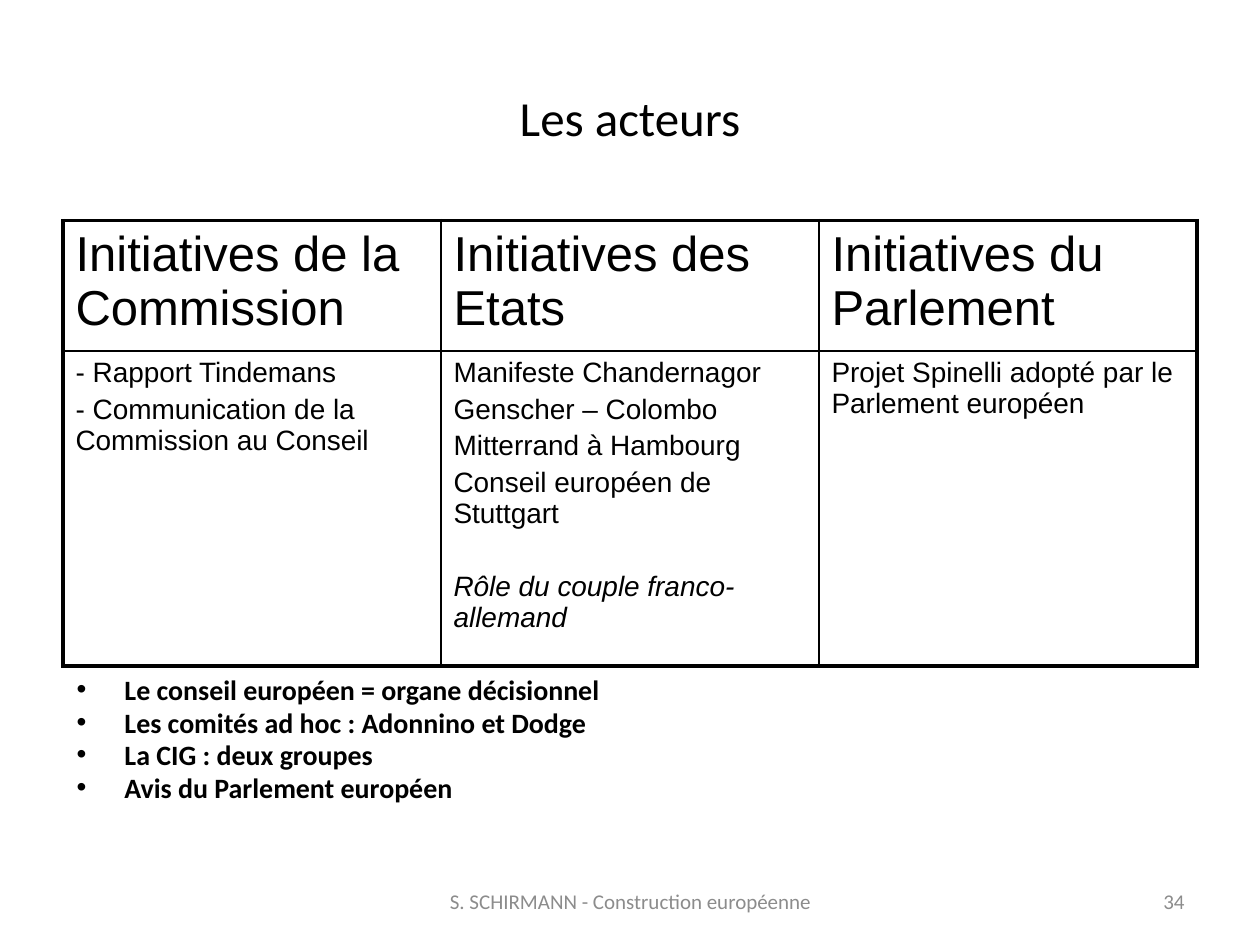
from lxml.etree import SubElement
from pptx import Presentation
from pptx.dml.color import RGBColor
from pptx.enum.text import MSO_ANCHOR as Anchor, PP_ALIGN as Align
from pptx.oxml.ns import qn
from pptx.util import Inches, Pt

COLORS = {"text": "000000", "footer": "8C8C8C", "border": "000000"}
THIN, THICK = 1, 2.25
COLUMNS = [
    ("Initiatives de la Commission",
     ["- Rapport Tindemans", "- Communication de la Commission au Conseil"]),
    ("Initiatives des Etats",
     ["Manifeste Chandernagor", "Genscher – Colombo", "Mitterrand à Hambourg",
      "Conseil européen de Stuttgart", "Rôle du couple franco-allemand"]),
    ("Initiatives du Parlement",
     ["Projet Spinelli adopté par le Parlement européen"]),
]
CONCLUSIONS = [
    "Le conseil européen = organe décisionnel",
    "Les comités ad hoc : Adonnino et Dodge",
    "La CIG : deux groupes",
    "Avis du Parlement européen",
]


def fill_text(frame, lines, size, font="Calibri", color="text", align=Align.LEFT):
    """Write one paragraph per line and return the paragraphs."""
    frame.word_wrap = True
    for index, line in enumerate(lines):
        para = frame.add_paragraph() if index else frame.paragraphs[0]
        para.text = line
        para.alignment = align
        para.font.name = font
        para.font.size = Pt(size)
        para.font.color.rgb = RGBColor.from_string(COLORS[color])
    return frame.paragraphs


def add_text(page, box, lines, size, anchor=Anchor.MIDDLE, **style):
    frame = page.shapes.add_textbox(*map(Inches, box)).text_frame
    frame.vertical_anchor = anchor
    return fill_text(frame, lines, size, **style)


def set_borders(cell, widths):
    """Draw the left, right, top and bottom borders, widths in points."""
    props = cell._tc.get_or_add_tcPr()
    for index, (side, width) in enumerate(zip("LRTB", widths)):
        line = SubElement(props, qn(f"a:ln{side}"), w=str(Pt(width)))
        fill = SubElement(line, qn("a:solidFill"))
        SubElement(fill, qn("a:srgbClr"), val=COLORS["border"])
        props.insert(index, line)


def add_actors_table(page, box, row_heights):
    row_count, column_count = len(row_heights), len(COLUMNS)
    table = page.shapes.add_table(row_count, column_count, *map(Inches, box)).table
    table.first_row = table.horz_banding = False
    for row, height in zip(table.rows, row_heights):
        row.height = Inches(height)
    for c, (heading, items) in enumerate(COLUMNS):
        table.columns[c].width = Inches(box[2] / column_count)
        for r, (lines, size) in enumerate([([heading], 28), (items, 16)]):
            cell = table.cell(r, c)
            cell.fill.background()
            for para in fill_text(cell.text_frame, lines, size, font="Arial"):
                para.space_before = Pt(size * 0.2)
            outer = (c == 0, c == column_count - 1, r == 0, r == row_count - 1)
            set_borders(cell, [THICK if edge else THIN for edge in outer])
    closing = table.cell(1, 1).text_frame.paragraphs[-1]
    closing.font.italic = True
    closing.space_before = Pt(24)


def add_conclusions(page, box):
    for para in add_text(page, box, CONCLUSIONS, 16, anchor=Anchor.TOP):
        para.font.bold = True
        para.line_spacing = 0.8
        para.space_before = Pt(3.2)
        props = para._p.get_or_add_pPr()
        props.set("marL", str(Inches(0.38)))
        props.set("indent", str(-Inches(0.38)))
        bullet_font = SubElement(props, qn("a:buFont"), typeface="Arial")
        bullet = SubElement(props, qn("a:buChar"), char="•")
        props.find(qn("a:defRPr")).addprevious(bullet_font)
        bullet_font.addnext(bullet)


def add_footer(page, top, height):
    add_text(page, (3.42, top, 3.17, height), ["S. SCHIRMANN - Construction européenne"],
             12, color="footer", align=Align.CENTER)
    add_text(page, (7.17, top, 2.33, height), ["34"],
             12, color="footer", align=Align.RIGHT)


def main():
    deck = Presentation()
    deck.slide_width, deck.slide_height = Inches(10), Inches(7.5)
    page = deck.slides.add_slide(deck.slide_layouts[6])
    add_text(page, (0.5, 0.3, 9, 1.25), ["Les acteurs"], 28, align=Align.CENTER)
    add_actors_table(page, (0.5, 1.75, 9, 3.53), (1.03, 2.5))
    add_conclusions(page, (0.51, 5.34, 9, 1.35))
    add_footer(page, 6.95, 0.4)
    deck.save("out.pptx")


if __name__ == "__main__":
    main()
